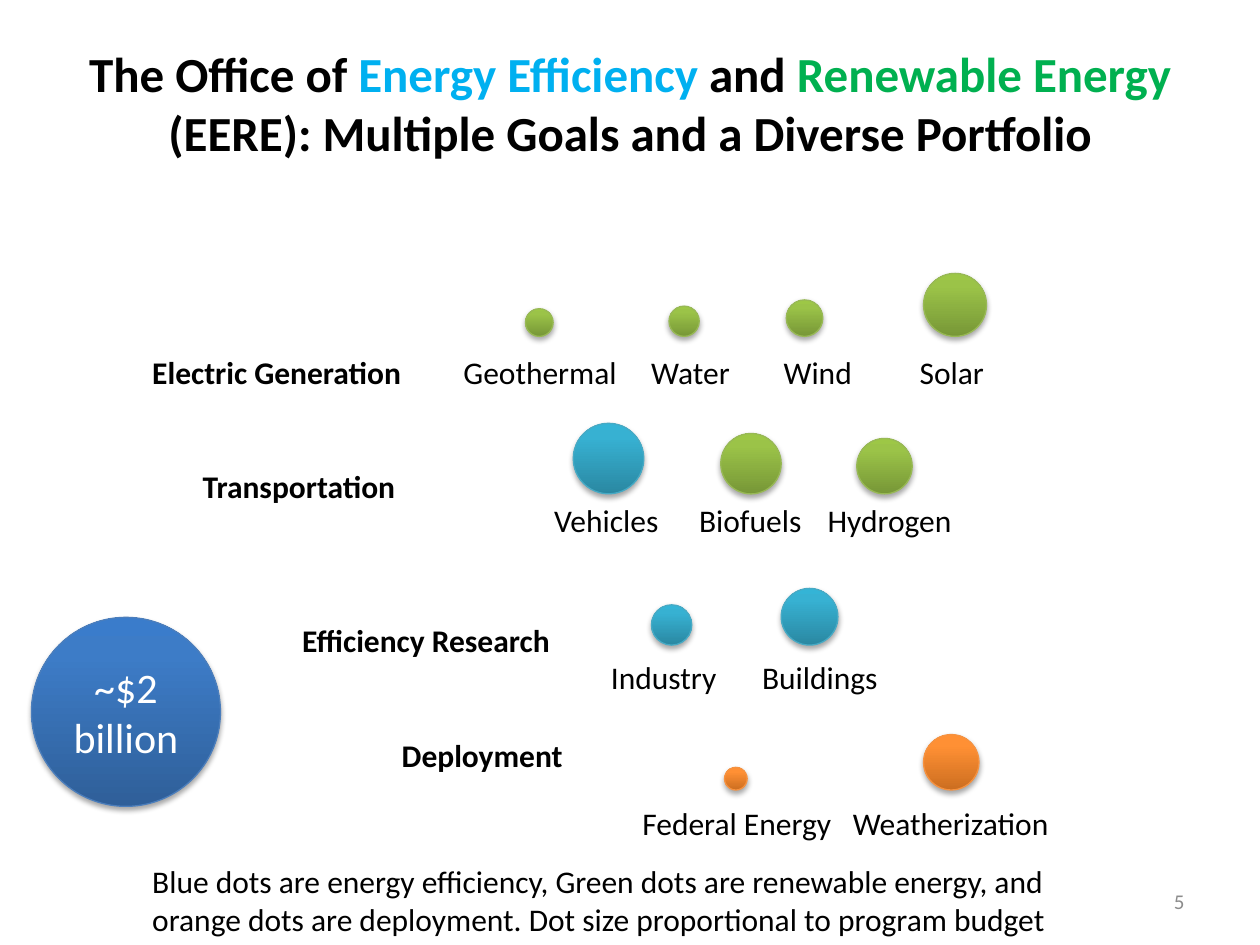
from copy import deepcopy
from dataclasses import dataclass

from lxml import etree
from pptx import Presentation, util as u
from pptx.dml.color import RGBColor
from pptx.enum import shapes, text
from pptx.oxml import ns

BLACK = RGBColor(0x00, 0x00, 0x00)
WHITE = RGBColor(0xFF, 0xFF, 0xFF)
GRAY = RGBColor(0x8C, 0x8C, 0x8C)
SKY = RGBColor(0x00, 0xB0, 0xF0)
LEAF = RGBColor(0x00, 0xB0, 0x50)
ALIGN = text.PP_ALIGN
ANCHOR = text.MSO_ANCHOR


@dataclass
class Tone:
    low: RGBColor
    mid: RGBColor
    top: RGBColor
    edge: RGBColor


@dataclass
class Dot:
    name: str
    left: float
    size: float
    tone: Tone
    text_x: float
    text_w: float


@dataclass
class Row:
    base: float
    text_y: float
    dots: list[Dot]


@dataclass
class Head:
    name: str
    indent: float
    before: int


def tone(*codes: str) -> Tone:
    return Tone(*(RGBColor.from_string(code) for code in codes))


BLUE = tone("2A88A2", "37B1D2", "34B4D6", "46AAC5")
GREEN = tone("779737", "9BC348", "9DC746", "98B955")
ORANGE = tone("CC6E20", "FF9034", "FF9136", "F69240")
NAVY = tone("2F5F99", "3D7CC7", "3A7CCB", "4B7EBC")

ROWS = [
    Row(2.67, 2.75, [
        Dot("Geothermal", 4.17, 0.22, GREEN, 3.58, 1.43),
        Dot("Water", 5.31, 0.24, GREEN, 5.07, 0.83),
        Dot("Wind", 6.24, 0.29, GREEN, 6.12, 0.75),
        Dot("Solar", 7.33, 0.5, GREEN, 7.2, 0.72),
    ]),
    Row(3.92, 3.93, [
        Dot("Vehicles", 4.55, 0.56, BLUE, 4.3, 1.04),
        Dot("Biofuels", 5.72, 0.48, GREEN, 5.45, 1.02),
        Dot("Hydrogen", 6.8, 0.44, GREEN, 6.47, 1.2),
    ]),
    Row(5.12, 5.17, [
        Dot("Industry", 5.17, 0.32, BLUE, 4.75, 1.05),
        Dot("Buildings", 6.2, 0.45, BLUE, 5.95, 1.13),
    ]),
    Row(6.27, 6.33, [
        Dot("Federal Energy", 5.75, 0.18, ORANGE, 5, 1.72),
        Dot("Weatherization", 7.33, 0.44, ORANGE, 6.67, 1.77),
    ]),
]

HEADS = [
    Head("Electric Generation", 0, 0),
    Head("Transportation", 0.4, 44),
    Head("Efficiency Research", 1.19, 66),
    Head("Deployment", 1.98, 44),
]

TITLE = [
    ("The Office of ", BLACK),
    ("Energy Efficiency", SKY),
    (" and ", BLACK),
    ("Renewable Energy ", LEAF),
    ("(EERE): Multiple Goals and a Diverse Portfolio", BLACK),
]

NOTE = ("Blue dots are energy efficiency, Green dots are renewable energy, and "
        "orange dots are deployment. Dot size proportional to program budget")


def apply(item, values: dict) -> None:
    for key, value in values.items():
        setattr(item, key, value)


def write(para, words: str, size: float, color: RGBColor = BLACK, bold: bool = False) -> None:
    run = para.add_run()
    run.text = words
    apply(run.font, {"name": "Calibri", "size": u.Pt(size), "bold": bold})
    run.font.color.rgb = color


def add_box(slide, x: float, y: float, w: float, h: float, wrap: bool = True):
    frame = slide.shapes.add_textbox(*map(u.Inches, (x, y, w, h))).text_frame
    frame.word_wrap = wrap
    return frame


def add_ball(slide, x: float, y: float, size: float, hue: Tone):
    ball = slide.shapes.add_shape(
        shapes.MSO_SHAPE.OVAL, *map(u.Inches, (x, y, size, size)))
    ball.fill.gradient()
    ball.fill.gradient_angle = 90
    props = ball.element.spPr
    stops = props.find(".//" + ns.qn("a:gsLst"))
    stops.append(deepcopy(stops[-1]))
    marks = zip(ball.fill.gradient_stops, (0, 0.8, 1), (hue.low, hue.mid, hue.top))
    for stop, place, color in marks:
        stop.position = place
        stop.color.rgb = color
    ball.line.color.rgb = hue.edge
    ball.line.width = u.Pt(0.75)
    ball.shadow.inherit = False
    shade = etree.SubElement(
        props.find(ns.qn("a:effectLst")), ns.qn("a:outerShdw"),
        blurRad="40000", dist="23000", dir="5400000", rotWithShape="0")
    black = etree.SubElement(shade, ns.qn("a:srgbClr"), val="000000")
    etree.SubElement(black, ns.qn("a:alpha"), val="35000")
    return ball


def add_title(slide) -> None:
    title = slide.shapes.title
    apply(title, {"left": u.Inches(0.5), "top": u.Inches(0.42),
                  "width": u.Inches(9), "height": u.Inches(1.25)})
    frame = title.text_frame
    apply(frame, {"auto_size": text.MSO_AUTO_SIZE.NONE, "word_wrap": True,
                  "vertical_anchor": ANCHOR.MIDDLE, "margin_bottom": u.Inches(0.52)})
    para = frame.paragraphs[0]
    para.alignment = ALIGN.CENTER
    for words, color in TITLE:
        write(para, words, 28, color, True)


def add_heads(slide) -> None:
    frame = add_box(slide, 1.11, 2.75, 4.42, 4.04)
    for spot, head in enumerate(HEADS):
        para = frame.add_paragraph() if spot else frame.paragraphs[0]
        para.space_before = u.Pt(head.before)
        para._p.get_or_add_pPr().set("marL", str(u.Inches(head.indent)))
        write(para, head.name, 18, bold=True)


def add_row(slide, row: Row) -> None:
    for dot in row.dots:
        add_ball(slide, dot.left, row.base - dot.size, dot.size, dot.tone)
        frame = add_box(slide, dot.text_x, row.text_y, dot.text_w, 0.4, False)
        write(frame.paragraphs[0], dot.name, 18)


def add_total(slide) -> None:
    frame = add_ball(slide, 0.25, 4.9, 1.5, NAVY).text_frame
    apply(frame, {"word_wrap": True, "vertical_anchor": ANCHOR.MIDDLE})
    para = frame.paragraphs[0]
    para.alignment = ALIGN.CENTER
    write(para, "~$2 billion", 24, WHITE)


def add_foot(slide) -> None:
    page = add_box(slide, 7.17, 6.95, 2.33, 0.4)
    page.vertical_anchor = ANCHOR.MIDDLE
    page.paragraphs[0].alignment = ALIGN.RIGHT
    write(page.paragraphs[0], "5", 12, GRAY)
    write(add_box(slide, 1.11, 6.79, 8, 0.71).paragraphs[0], NOTE, 18)


def main() -> None:
    deck = Presentation()
    apply(deck, {"slide_width": u.Inches(10), "slide_height": u.Inches(7.5)})
    slide = deck.slides.add_slide(deck.slide_layouts[5])
    add_title(slide)
    add_heads(slide)
    for row in ROWS:
        add_row(slide, row)
    add_total(slide)
    add_foot(slide)
    deck.save("out.pptx")


if __name__ == "__main__":
    main()
